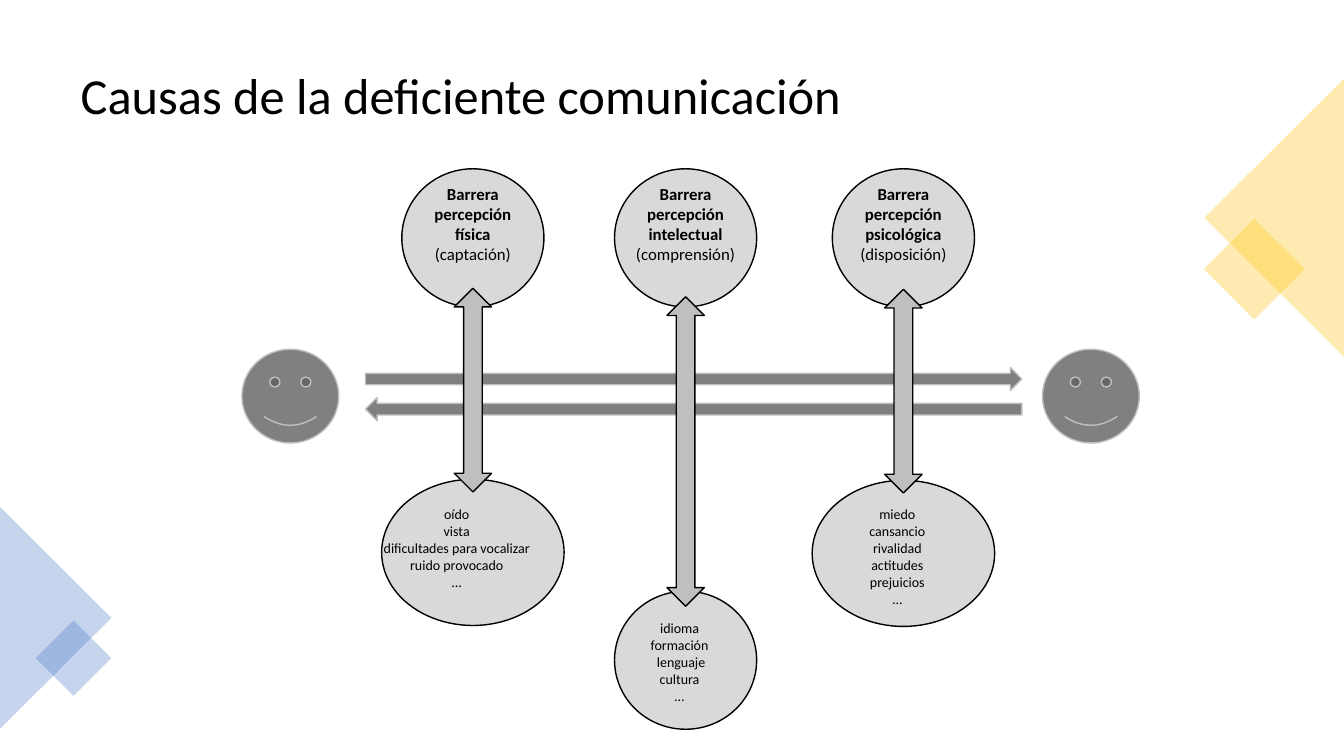
from lxml import etree
from pptx import Presentation
from pptx.dml.color import RGBColor
from pptx.enum import shapes, text
from pptx.oxml.ns import qn
from pptx.util import Inches, Pt

BLACK = RGBColor(0x00, 0x00, 0x00)
DARK = RGBColor(0x80, 0x80, 0x80)
MID = RGBColor(0xBF, 0xBF, 0xBF)
LIGHT = RGBColor(0xD9, 0xD9, 0xD9)
GOLD = RGBColor(0xFF, 0xC0, 0x00)
BLUE = RGBColor(0x44, 0x72, 0xC4)
KIND = shapes.MSO_SHAPE

# Each barrier: centre x, heading, its box width, causes, their box size,
# right margin, lower oval (centre y, width, height), arrow (centre y, length)
BARS = [
    (4.69, ["Barrera", "percepción", "física", "(captación)"], 1.12,
     ["oído", "vista", "dificultades para vocalizar", "ruido provocado", "…"],
     (4.97, 1.97, 1.05), 0.32, (5.48, 1.81, 1.45), (3.87, 2.02)),
    (6.8, ["Barrera", "percepción", "intelectual", "(comprensión)"], 1.37,
     ["idioma", "formación", " lenguaje", "cultura", "…"],
     (6.1, 0.9, 1.05), 0.12, (6.55, 1.41, 1.37), (4.48, 3.07)),
    (8.96, ["Barrera", "percepción", "psicológica", "(disposición)"], 1.22,
     ["miedo", "cansancio", "rivalidad", "actitudes", "prejuicios", "…"],
     (4.97, 0.87, 1.23), 0.12, (5.49, 1.81, 1.45), (3.88, 2.02)),
]


def write(frame, lines, size=10, bold=0, align=text.PP_ALIGN.CENTER):
    """Write one paragraph per line; the first `bold` lines are bold."""
    for i, line in enumerate(lines):
        para = frame.paragraphs[0] if i == 0 else frame.add_paragraph()
        para.alignment = align
        run = para.add_run()
        run.text = line
        run.font.name = "Calibri"
        run.font.size = Pt(size)
        run.font.bold = i < bold
        run.font.color.rgb = BLACK


def draw(slide, kind, x, y, w, h, fill, line=None, turn=0, alpha=None):
    """Draw a shape centred on x, y."""
    item = slide.shapes.add_shape(
        kind, Inches(x - w / 2), Inches(y - h / 2), Inches(w), Inches(h))
    item.shadow.inherit = False
    item.rotation = turn
    item.fill.solid()
    item.fill.fore_color.rgb = fill
    if alpha is not None:
        tint = item.fill._xPr.find(qn("a:solidFill"))[0]
        etree.SubElement(tint, qn("a:alpha")).set("val", str(alpha * 1000))
    if line is None:
        item.line.fill.background()
    else:
        item.line.color.rgb = line
        item.line.width = Pt(1)


def label(slide, lines, x, top, w, h, right=0, **style):
    """Add unwrapped text in a box centred on x; a right margin shifts it."""
    box = slide.shapes.add_textbox(
        Inches(x - w / 2), Inches(top), Inches(w), Inches(h))
    box.text_frame.word_wrap = False
    box.text_frame.margin_left = 0
    box.text_frame.margin_right = Inches(right)
    write(box.text_frame, lines, **style)


def decor(slide):
    for kind, x, y, w, h, fill, turn in [
        (KIND.RECTANGLE, 12.44, 2.67, 0.71, 0.71, GOLD, 45),
        (KIND.ISOSCELES_TRIANGLE, 12.64, 2.16, 2.77, 1.39, GOLD, 270),
        (KIND.ISOSCELES_TRIANGLE, 0.55, 6.13, 2.21, 1.11, BLUE, 90),
        (KIND.RECTANGLE, 0.73, 6.53, 0.53, 0.53, BLUE, 45),
    ]:
        draw(slide, kind, x, y, w, h, fill, turn=turn, alpha=30)


def talk(slide):
    """Two speakers and the messages between them."""
    for x in (2.88, 10.82):
        draw(slide, KIND.SMILEY_FACE, x, 3.93, 0.96, 0.93, DARK, MID)
    for y, turn in ((3.76, 270), (4.06, 90)):
        draw(slide, KIND.DOWN_ARROW, 6.88, y, 0.23, 6.51, DARK, MID, turn)


def column(slide, x, head, wide, causes, area, right, oval, arrow):
    low, w, h = oval
    mid, span = arrow
    top, *size = area
    draw(slide, KIND.OVAL, x, 2.36, 1.41, 1.37, LIGHT, BLACK)
    draw(slide, KIND.OVAL, x, low, w, h, LIGHT, BLACK)
    label(slide, head, x, 1.77, wide, 1.01, size=12, bold=3)
    draw(slide, KIND.LEFT_RIGHT_ARROW, x, mid, span, 0.37, MID, BLACK, 90)
    label(slide, causes, x, top, *size, right=right)


def main():
    deck = Presentation()
    deck.slide_width, deck.slide_height = Inches(13.33), Inches(7.5)
    slide = deck.slides.add_slide(deck.slide_layouts[5])

    # Title
    title = slide.shapes.title
    title.left, title.top = Inches(0.7), Inches(0.35)
    title.width, title.height = Inches(11.93), Inches(1.24)
    title.text_frame.vertical_anchor = text.MSO_ANCHOR.MIDDLE
    write(title.text_frame, ["Causas de la deficiente comunicación"],
          size=36, align=text.PP_ALIGN.LEFT)
    title.text_frame.paragraphs[0].line_spacing = 0.9

    # Corner ornaments, then the diagram
    decor(slide)
    talk(slide)
    for bar in BARS:
        column(slide, *bar)
    deck.save("out.pptx")


if __name__ == "__main__":
    main()
